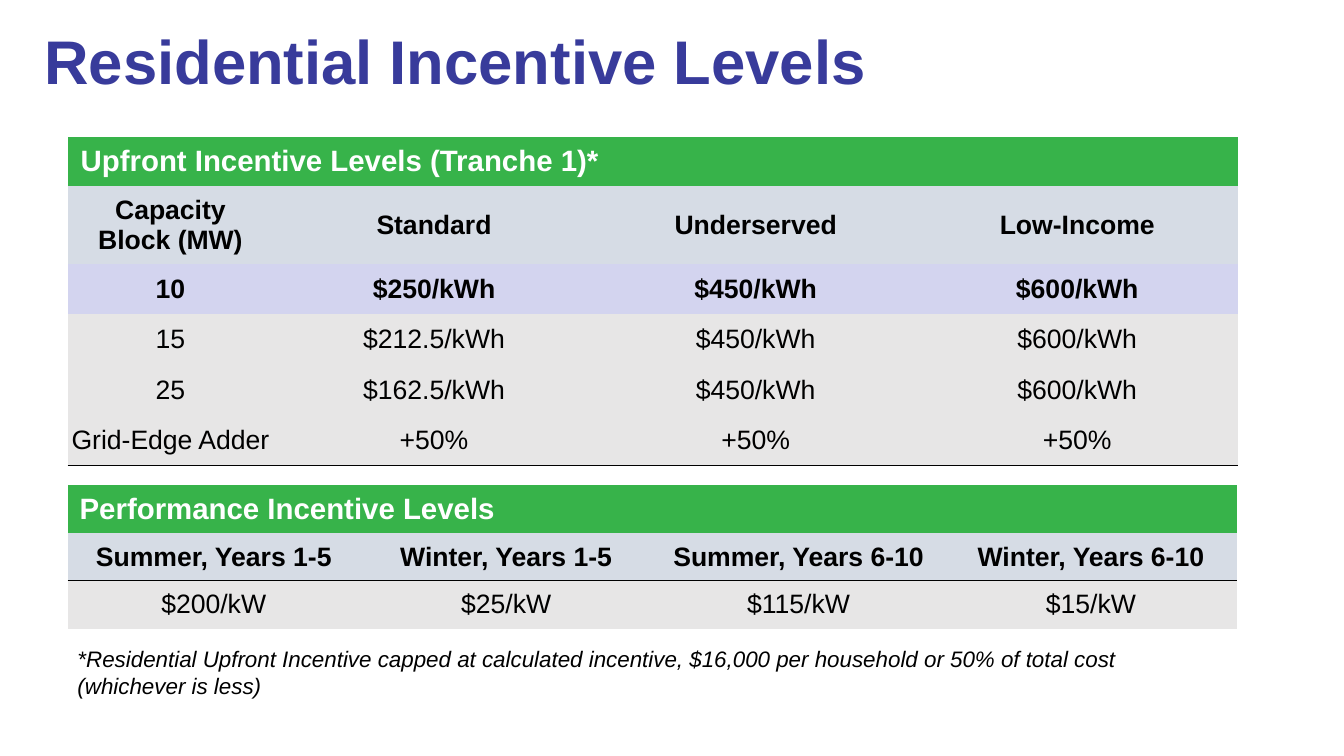
"""Build the residential incentive levels slide."""
from lxml.etree import SubElement
from pptx import Presentation
from pptx.dml.color import RGBColor
from pptx.enum.text import MSO_ANCHOR, PP_ALIGN
from pptx.oxml import parse_xml
from pptx.oxml.ns import qn
from pptx.util import Inches, Pt

NS = "http://schemas.openxmlformats.org/drawingml/2006/main"
PLAIN = "{2D5ABB26-0587-4C30-8999-92F81FD0307C}"
GREEN, BLUE, LILAC, GREY = "37B34A", "D6DCE5", "D3D4EF", "E7E6E6"
BLACK, WHITE, NAVY = "000000", "FFFFFF", "383B9B"

UPFRONT = [
    ["Capacity Block (MW)", "Standard", "Underserved", "Low-Income"],
    ["10", "$250/kWh", "$450/kWh", "$600/kWh"],
    ["15", "$212.5/kWh", "$450/kWh", "$600/kWh"],
    ["25", "$162.5/kWh", "$450/kWh", "$600/kWh"],
    ["Grid-Edge Adder", "+50%", "+50%", "+50%"],
]
YEARLY = [
    ["Summer, Years 1-5", "Winter, Years 1-5", "Summer, Years 6-10", "Winter, Years 6-10"],
    ["$200/kW", "$25/kW", "$115/kW", "$15/kW"],
]
NOTE = ("*Residential Upfront Incentive capped at calculated incentive, "
        "$16,000 per household or 50% of total cost (whichever is less)")


def color(code):
    return RGBColor.from_string(code)


def style(para, size, code, bold=False, italic=False):
    font = para.font
    font.name, font.size = "Arial", Pt(size)
    font.bold, font.italic = bold, italic
    font.color.rgb = color(code)


def rule(cell, side):
    line = parse_xml(
        f'<a:{side} xmlns:a="{NS}" w="12700"><a:solidFill>'
        f'<a:srgbClr val="{BLACK}"/></a:solidFill></a:{side}>')
    cell._tc.get_or_add_tcPr().insert(0, line)


def fill_cell(cell, text, fill, size, code, bold, pad):
    cell.text = text
    cell.vertical_anchor = MSO_ANCHOR.MIDDLE
    cell.margin_left = cell.margin_right = Inches(pad)
    cell.margin_top = cell.margin_bottom = Inches(pad / 2)
    cell.fill.solid()
    cell.fill.fore_color.rgb = color(fill)
    para = cell.text_frame.paragraphs[0]
    style(para, size, code, bold)
    return para


def add_grid(slide, top, head, rows, fills, widths, heights, pad):
    frame = slide.shapes.add_table(
        len(heights), len(widths), Inches(0.67), Inches(top),
        Inches(sum(widths)), Inches(sum(heights)))
    table = frame.table
    table.first_row = table.horz_banding = False
    props = table._tbl.tblPr
    mark = props.find(qn("a:tableStyleId"))
    if mark is None:
        mark = SubElement(props, qn("a:tableStyleId"))
    mark.text = PLAIN
    for col, width in zip(table.columns, widths):
        col.width = Inches(width)
    for row, height in zip(table.rows, heights):
        row.height = Inches(height)
    table.cell(0, 0).merge(table.cell(0, len(widths) - 1))
    fill_cell(table.cell(0, 0), head, GREEN, 21, WHITE, True, pad)
    for r, (row, fill) in enumerate(zip(rows, fills), 1):
        for c, text in enumerate(row):
            para = fill_cell(table.cell(r, c), text, fill, 19, BLACK,
                             fill != GREY, pad if r == 1 else 0)
            para.alignment = PP_ALIGN.CENTER
    return table


def rule_row(table, row, side):
    for c in range(len(table.columns)):
        rule(table.cell(row, c), side)


def add_title(slide, text):
    title = slide.shapes.title
    title.left, title.top = Inches(0), Inches(0.13)
    title.width, title.height = Inches(11.5), Inches(1.03)
    frame = title.text_frame
    frame.text = text
    frame.vertical_anchor = MSO_ANCHOR.MIDDLE
    para = frame.paragraphs[0]
    para.alignment = PP_ALIGN.LEFT
    para.line_spacing = 0.9
    para._p.get_or_add_pPr().set("marL", str(Inches(0.34)))
    style(para, 44, NAVY, bold=True)


def add_note(slide, text):
    box = slide.shapes.add_textbox(Inches(0.67), Inches(6.35), Inches(11.51), Inches(0.64))
    box.text_frame.word_wrap = True
    box.text_frame.text = text
    style(box.text_frame.paragraphs[0], 16, BLACK, italic=True)


def main():
    deck = Presentation()
    deck.slide_width, deck.slide_height = Inches(13.33), Inches(7.5)
    slide = deck.slides.add_slide(deck.slide_layouts[5])
    add_title(slide, "Residential Incentive Levels")
    upfront = add_grid(slide, 1.36, "Upfront Incentive Levels (Tranche 1)*", UPFRONT,
                       [BLUE, LILAC] + [GREY] * 3, [2.04] + [3.19] * 3,
                       [0.49, 0.77] + [0.5] * 4, 0.13)
    rule_row(upfront, 5, "lnB")
    yearly = add_grid(slide, 4.81, "Performance Incentive Levels", YEARLY,
                      [BLUE, GREY], [2.9] * 4, [0.48, 0.47, 0.48], 0.12)
    rule_row(yearly, 1, "lnB")
    rule_row(yearly, 2, "lnT")
    add_note(slide, NOTE)
    deck.save("out.pptx")


if __name__ == "__main__":
    main()
